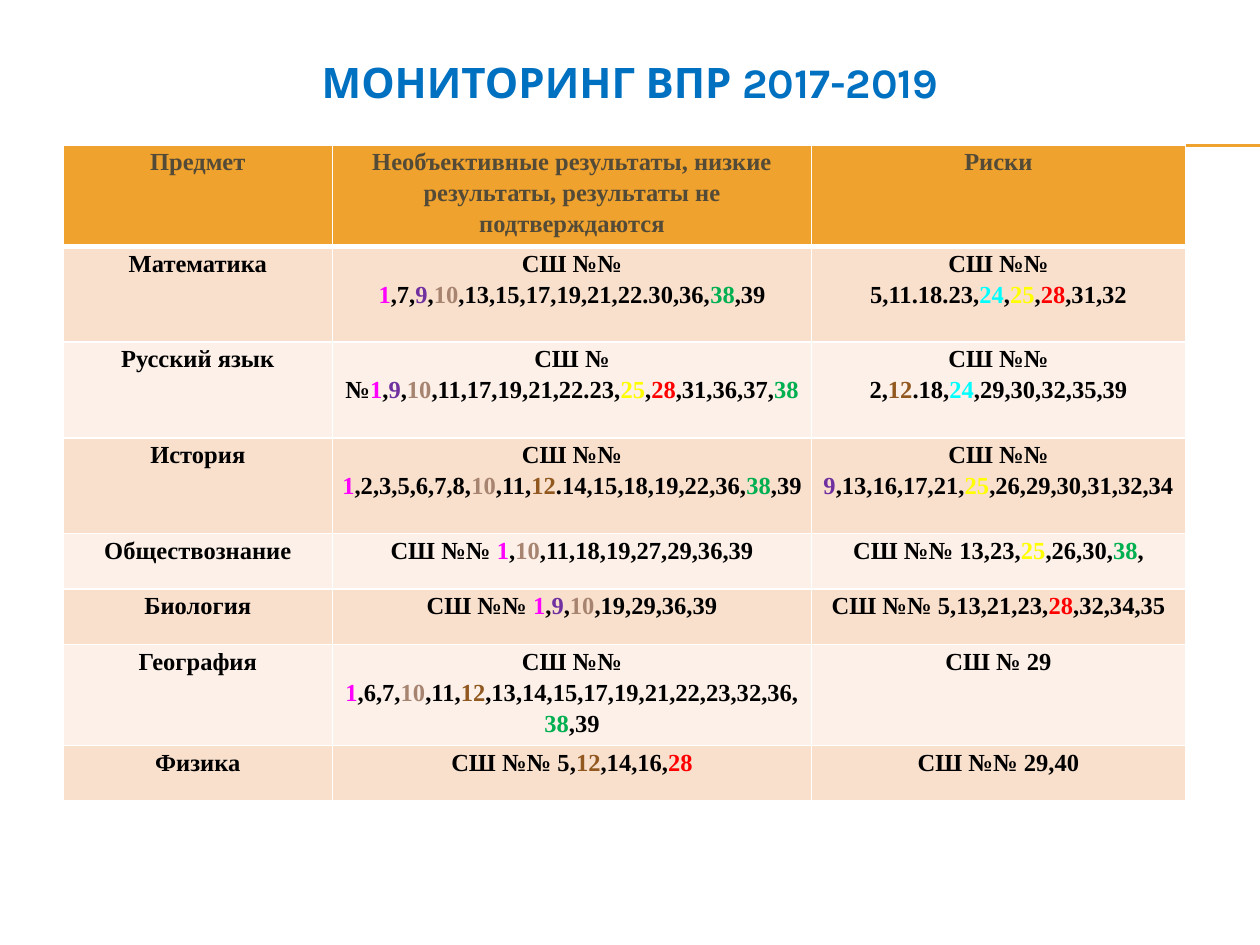
from itertools import groupby

from lxml.etree import SubElement
from pptx import Presentation
from pptx.dml.color import RGBColor
from pptx.enum.shapes import MSO_CONNECTOR
from pptx.enum.text import MSO_ANCHOR, PP_ALIGN
from pptx.oxml.ns import qn
from pptx.util import Inches, Pt

WHITE = RGBColor(0xFF, 0xFF, 0xFF)
BLACK = RGBColor(0x00, 0x00, 0x00)
BLUE = RGBColor(0x00, 0x70, 0xC0)
ORANGE = RGBColor(0xF0, 0xA2, 0x2E)
HEADER_TEXT = RGBColor(0x53, 0x4B, 0x38)
BANDS = [RGBColor(0xFC, 0xF0, 0xE8), RGBColor(0xF9, 0xE0, 0xCD)]
SCHOOL_COLORS = {
    "1": RGBColor(0xFF, 0x00, 0xFF),
    "9": RGBColor(0x70, 0x30, 0xA0),
    "10": RGBColor(0xA7, 0x84, 0x70),
    "12": RGBColor(0x91, 0x58, 0x1F),
    "24": RGBColor(0x00, 0xFF, 0xFF),
    "25": RGBColor(0xFF, 0xFF, 0x00),
    "28": RGBColor(0xFF, 0x00, 0x00),
    "38": RGBColor(0x00, 0xB0, 0x50),
}

SUBJECTS = [
    ("Предмет", "Необъективные результаты, низкие результаты, результаты не подтверждаются", "Риски"),
    ("Математика", "СШ №№ 1,7,9,10,13,15,17,19,21,22.30,36,38,39", "СШ №№ 5,11.18.23,24,25,28,31,32"),
    ("Русский язык", "СШ №№1,9,10,11,17,19,21,22.23,25,28,31,36,37,38", "СШ №№ 2,12.18,24,29,30,32,35,39"),
    ("История", "СШ №№ 1,2,3,5,6,7,8,10,11,12.14,15,18,19,22,36,38,39",
     "СШ №№ 9,13,16,17,21,25,26,29,30,31,32,34"),
    ("Обществознание", "СШ №№ 1,10,11,18,19,27,29,36,39", "СШ №№ 13,23,25,26,30,38,"),
    ("Биология", "СШ №№ 1,9,10,19,29,36,39", "СШ №№ 5,13,21,23,28,32,34,35"),
    ("География", "СШ №№ 1,6,7,10,11,12,13,14,15,17,19,21,22,23,32,36,38,39", "СШ № 29"),
    ("Физика", "СШ №№ 5,12,14,16,28", "СШ №№ 29,40"),
]
COLUMN_WIDTHS = [2.14, 3.8, 2.97]
TALL, SHORT = 0.76, 0.44
ROW_HEIGHTS = [TALL] * 4 + [SHORT] * 2 + [TALL, SHORT]


def add_run(paragraph, text, color, font_name, size):
    run = paragraph.add_run()
    run.text = text
    for key, value in {"name": font_name, "size": Pt(size), "bold": True}.items():
        setattr(run.font, key, value)
    run.font.color.rgb = color


def add_border(cell, side, points):
    """Draw one white cell edge; call before the cell gets its fill."""
    edge = SubElement(cell._tc.get_or_add_tcPr(), qn(f"a:{side}"), w=str(Pt(points)))
    SubElement(SubElement(edge, qn("a:solidFill")), qn("a:srgbClr"), val=str(WHITE))


deck = Presentation()
deck.slide_width, deck.slide_height = Inches(10), Inches(7.5)
slide = deck.slides.add_slide(deck.slide_layouts[6])

# Double rule that runs to the right edge
for y in (1.15, 1.16):
    rule = slide.shapes.add_connector(
        MSO_CONNECTOR.STRAIGHT, Inches(0.56), Inches(y), deck.slide_width, Inches(y))
    rule.line.color.rgb = ORANGE
    rule.line.width = Pt(0.75)
    SubElement(rule._element.spPr, qn("a:effectLst"))

title = slide.shapes.add_textbox(Inches(0.5), Inches(0.3), Inches(9), Inches(0.69)).text_frame
title.word_wrap = True
title.vertical_anchor = MSO_ANCHOR.MIDDLE
title.paragraphs[0].alignment = PP_ALIGN.CENTER
add_run(title.paragraphs[0], "МОНИТОРИНГ ВПР 2017-2019", BLUE, "Karla", 24)

monitoring = slide.shapes.add_table(
    len(SUBJECTS), len(COLUMN_WIDTHS), Inches(0.5), Inches(1.15),
    Inches(sum(COLUMN_WIDTHS)), Inches(sum(ROW_HEIGHTS))).table
for column, width in zip(monitoring.columns, COLUMN_WIDTHS):
    column.width = Inches(width)
for row, height in zip(monitoring.rows, ROW_HEIGHTS):
    row.height = Inches(height)

cell_format = {"margin_left": Inches(0.07), "margin_right": Inches(0.07),
               "margin_top": 0, "margin_bottom": 0, "vertical_anchor": MSO_ANCHOR.TOP}
for r, subject in enumerate(SUBJECTS):
    base_color = BLACK if r else HEADER_TEXT
    for c, text in enumerate(subject):
        cell = monitoring.cell(r, c)
        for key, value in cell_format.items():
            setattr(cell, key, value)
        edges = {"lnL": 1, "lnR": 1, "lnT": 3 if r == 1 else 1, "lnB": 1 if r else 3}
        for side, points in edges.items():
            add_border(cell, side, points)
        cell.fill.solid()
        cell.fill.fore_color.rgb = BANDS[r % 2] if r else ORANGE

        paragraph = cell.text_frame.paragraphs[0]
        paragraph.alignment = PP_ALIGN.CENTER
        paragraph.line_spacing = 1.15
        # Each tracked school number keeps its own colour throughout the table
        pieces = ["".join(chars) for _, chars in groupby(text, str.isdigit)]
        for color, group in groupby(pieces, lambda piece: SCHOOL_COLORS.get(piece, base_color)):
            add_run(paragraph, "".join(group), color, "Times New Roman", 14)

deck.save("out.pptx")
